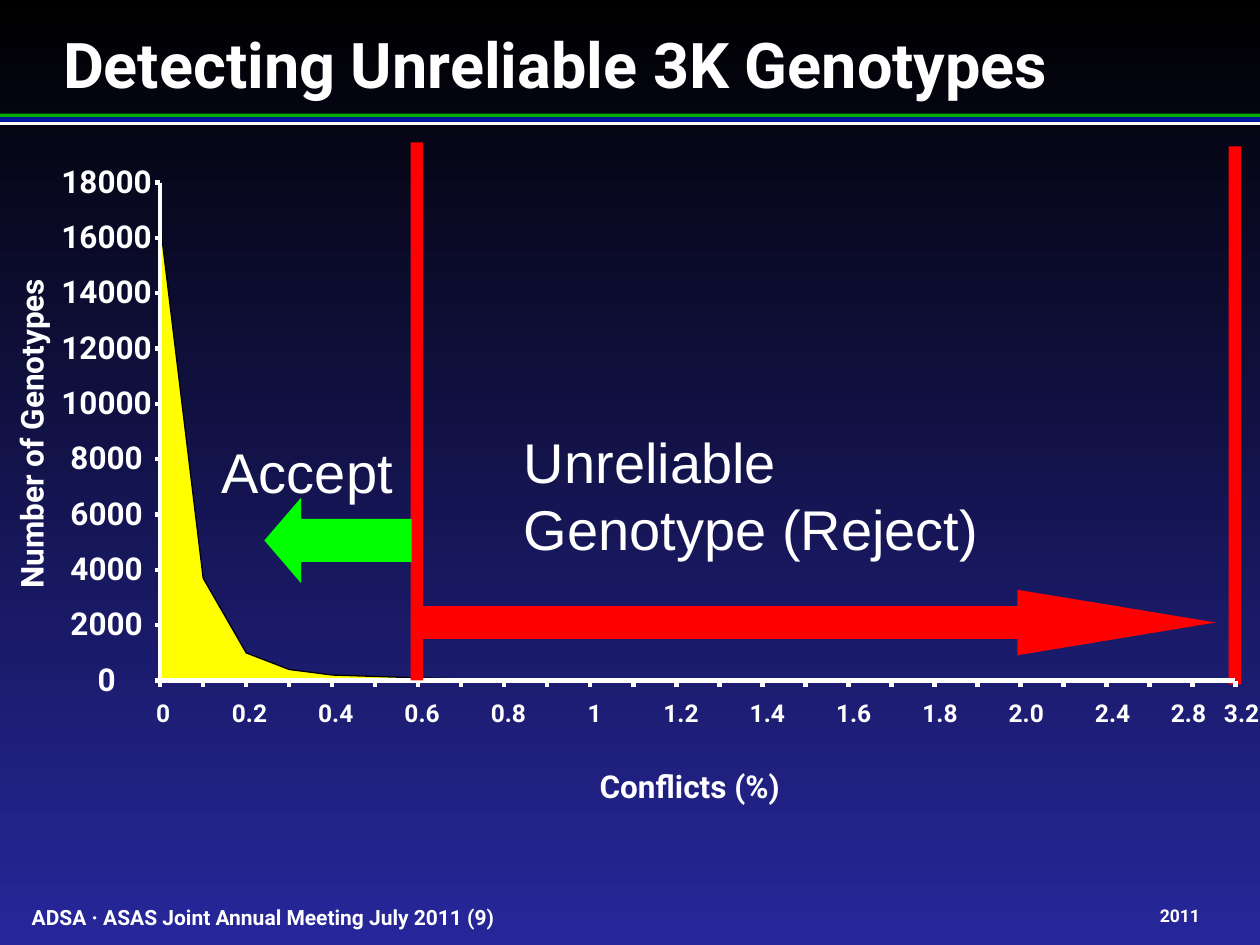
from dataclasses import dataclass

from lxml import etree
from pptx import Presentation
from pptx.dml.color import RGBColor
from pptx.enum.shapes import MSO_CONNECTOR, MSO_SHAPE
from pptx.enum.text import MSO_ANCHOR, MSO_AUTO_SIZE, PP_ALIGN
from pptx.oxml.ns import qn
from pptx.util import Cm, Pt

STRAIGHT = MSO_CONNECTOR.STRAIGHT
RECTANGLE = MSO_SHAPE.RECTANGLE
LEFT_ARROW, RIGHT_ARROW = MSO_SHAPE.LEFT_ARROW, MSO_SHAPE.RIGHT_ARROW
TOP, MIDDLE = MSO_ANCHOR.TOP, MSO_ANCHOR.MIDDLE
LEFT, CENTER = PP_ALIGN.LEFT, PP_ALIGN.CENTER
NO_AUTOFIT = MSO_AUTO_SIZE.NONE
TITLE_ONLY = 5


@dataclass(frozen=True)
class Theme:
    """Colours, fonts and type sizes of the slide."""
    white: str = "FFFFFF"
    black: str = "000000"
    navy: str = "27279B"
    rule_green: str = "01AF00"
    rule_blue: str = "001799"
    area: str = "FFFF00"
    accept: str = "00FF00"
    reject: str = "FF0000"
    font: str = "Roboto"
    callout_font: str = "Arial"
    title: int = 36
    callout: int = 32
    axis: int = 18
    tick: int = 14
    footer: int = 12
    year: int = 10


THEME = Theme()
AXIS_LEFT, AXIS_TOP, BASELINE = 3.23, 3.68, 13.72
INTERVALS, INTERVAL_WIDTH = 25, 0.867
COUNT_MAX, COUNT_STEP = 18000, 2000
GENOTYPE_COUNTS = [16500, 3700, 1000, 400, 200, 150, 100, 60, 50, 40]
CONFLICT_LABELS = ["0", "0.2", "0.4", "0.6", "0.8", "1", "1.2", "1.4",
                   "1.6", "1.8", "2.0", "2.4", "2.8", "3.2"]


def rgb(colour):
    """Turn a theme colour into an RGBColor."""
    return RGBColor.from_string(colour)


def count_y(count):
    """Give the height on the slide, in cm, of a number of genotypes."""
    return BASELINE - count * (BASELINE - AXIS_TOP) / COUNT_MAX


def interval_x(index):
    """Give the horizontal place, in cm, of a tick on the conflict axis."""
    return AXIS_LEFT + index * INTERVAL_WIDTH


def paint_background(slide):
    """Fill the background from black at the top to navy at the bottom."""
    fill = slide.background.fill
    fill.gradient()
    fill.gradient_angle = 270
    for stop, colour in zip(fill.gradient_stops, (THEME.black, THEME.navy)):
        stop.color.rgb = rgb(colour)


def write_text(shape, text, size, font=THEME.font, bold=True,
               align=LEFT, anchor=TOP, wrap=False, inset=(0, 0)):
    """Write one formatted run into a shape."""
    frame = shape.text_frame
    frame.auto_size = NO_AUTOFIT
    frame.word_wrap = wrap
    frame.vertical_anchor = anchor
    frame.margin_left = frame.margin_right = Cm(inset[0])
    frame.margin_top = frame.margin_bottom = Cm(inset[1])
    paragraph = frame.paragraphs[0]
    paragraph.alignment = align
    run = paragraph.add_run()
    run.text = text
    run.font.name = font
    run.font.size = Pt(size)
    run.font.bold = bold
    run.font.color.rgb = rgb(THEME.white)


def add_label(slide, box, text, size, rotation=0, **style):
    """Add a text box at a left, top, width and height in cm."""
    shape = slide.shapes.add_textbox(*map(Cm, box))
    shape.rotation = rotation
    write_text(shape, text, size, **style)


def add_block(slide, kind, box, colour, adjustments=()):
    """Add a filled preset shape without outline."""
    shape = slide.shapes.add_shape(kind, *map(Cm, box))
    shape.shadow.inherit = False
    shape.fill.solid()
    shape.fill.fore_color.rgb = rgb(colour)
    shape.line.fill.background()
    for index, value in enumerate(adjustments):
        shape.adjustments[index] = value


def add_axis_line(slide, *ends):
    """Add a white line from one point to another, in cm."""
    line = slide.shapes.add_connector(STRAIGHT, *map(Cm, ends))
    line.line.color.rgb = rgb(THEME.white)
    line.line.width = Pt(2.5)
    etree.SubElement(line._element.spPr, qn("a:effectLst"))


def add_area(slide):
    """Draw the area under the genotype counts."""
    counts = GENOTYPE_COUNTS + [0] * (INTERVALS + 1 - len(GENOTYPE_COUNTS))
    points = [(Cm(interval_x(index)), Cm(count_y(count)))
              for index, count in enumerate(counts)]
    builder = slide.shapes.build_freeform(Cm(AXIS_LEFT), Cm(BASELINE))
    builder.add_line_segments(points, close=True)
    area = builder.convert_to_shape()
    area.shadow.inherit = False
    area.fill.solid()
    area.fill.fore_color.rgb = rgb(THEME.area)
    area.line.color.rgb = rgb(THEME.black)
    area.line.width = Pt(0.75)


def add_count_axis(slide):
    """Draw the vertical axis with its ticks, labels and title."""
    add_axis_line(slide, AXIS_LEFT, AXIS_TOP, AXIS_LEFT, BASELINE)
    for count in range(0, COUNT_MAX + 1, COUNT_STEP):
        y = count_y(count)
        add_axis_line(slide, AXIS_LEFT - 0.1, y, AXIS_LEFT, y)
        add_label(slide, (1.21, y - 0.42, 1.88, 0.76), str(count),
                  THEME.axis, align=CENTER)
    add_label(slide, (-2.74, 8.36, 6.73, 0.76), "Number of Genotypes",
              THEME.axis, rotation=270, align=CENTER)


def add_conflict_axis(slide):
    """Draw the horizontal axis with its ticks, labels and title."""
    add_axis_line(slide, AXIS_LEFT, BASELINE, interval_x(INTERVALS), BASELINE)
    for index in range(INTERVALS + 1):
        x = interval_x(index)
        add_axis_line(slide, x, BASELINE + 0.12, x, BASELINE)
    centres = [3.29 + 1.74 * index for index in range(12)] + [23.96, 25.03]
    for centre, text in zip(centres, CONFLICT_LABELS):
        add_label(slide, (centre - 0.37, 14.07, 0.74, 0.58), text,
                  THEME.tick, align=CENTER)
    add_label(slide, (11.96, 15.47, 3.89, 0.76), "Conflicts (%)",
              THEME.axis, align=CENTER)


def add_frame(slide):
    """Set the title, the rules below it and the footer."""
    for top, height, colour in ((2.29, 0.08, THEME.rule_green),
                                (2.44, 0.08, THEME.white),
                                (2.36, 0.1, THEME.rule_blue)):
        add_block(slide, RECTANGLE, (0, top, 25.4, height), colour)
    title = slide.shapes.title
    title.left, title.top, title.width, title.height = map(
        Cm, (1.27, 0.51, 22.86, 1.52))
    write_text(title, "Detecting Unreliable 3K Genotypes", THEME.title,
               anchor=MIDDLE, wrap=True)
    add_label(slide, (0.64, 18.24, 14.76, 0.51),
              "ADSA · ASAS Joint Annual Meeting July 2011 (9)",
              THEME.footer, anchor=MIDDLE, wrap=True)
    add_label(slide, (23.01, 18.24, 1.55, 0.43), "2011", THEME.year,
              align=CENTER, anchor=MIDDLE, wrap=True)


def add_decision(slide):
    """Mark the threshold and the accepted and rejected ranges."""
    add_block(slide, RECTANGLE, (8.28, 2.87, 0.25, 10.85), THEME.reject)
    add_block(slide, LEFT_ARROW, (5.33, 10.03, 2.97, 1.73), THEME.accept,
              (0.5, 0.43))
    add_block(slide, RIGHT_ARROW, (8.46, 11.89, 16.05, 1.32), THEME.reject,
              (0.5, 3.03))
    for box, text in (((4.22, 8.69, 5.03, 1.6), "Accept"),
                      ((10.31, 8.48, 9.75, 2.97),
                       "Unreliable Genotype (Reject)")):
        add_label(slide, box, text, THEME.callout, font=THEME.callout_font,
                  bold=False, wrap=True, inset=(0.25, 0.13))


def main():
    """Build the slide and save it."""
    presentation = Presentation()
    presentation.slide_width, presentation.slide_height = Cm(25.4), Cm(19.05)
    slide = presentation.slides.add_slide(
        presentation.slide_layouts[TITLE_ONLY])
    paint_background(slide)
    add_frame(slide)
    add_block(slide, RECTANGLE, (24.77, 2.95, 0.25, 10.85), THEME.reject)
    add_area(slide)
    add_count_axis(slide)
    add_conflict_axis(slide)
    add_decision(slide)
    presentation.save("out.pptx")


if __name__ == "__main__":
    main()
